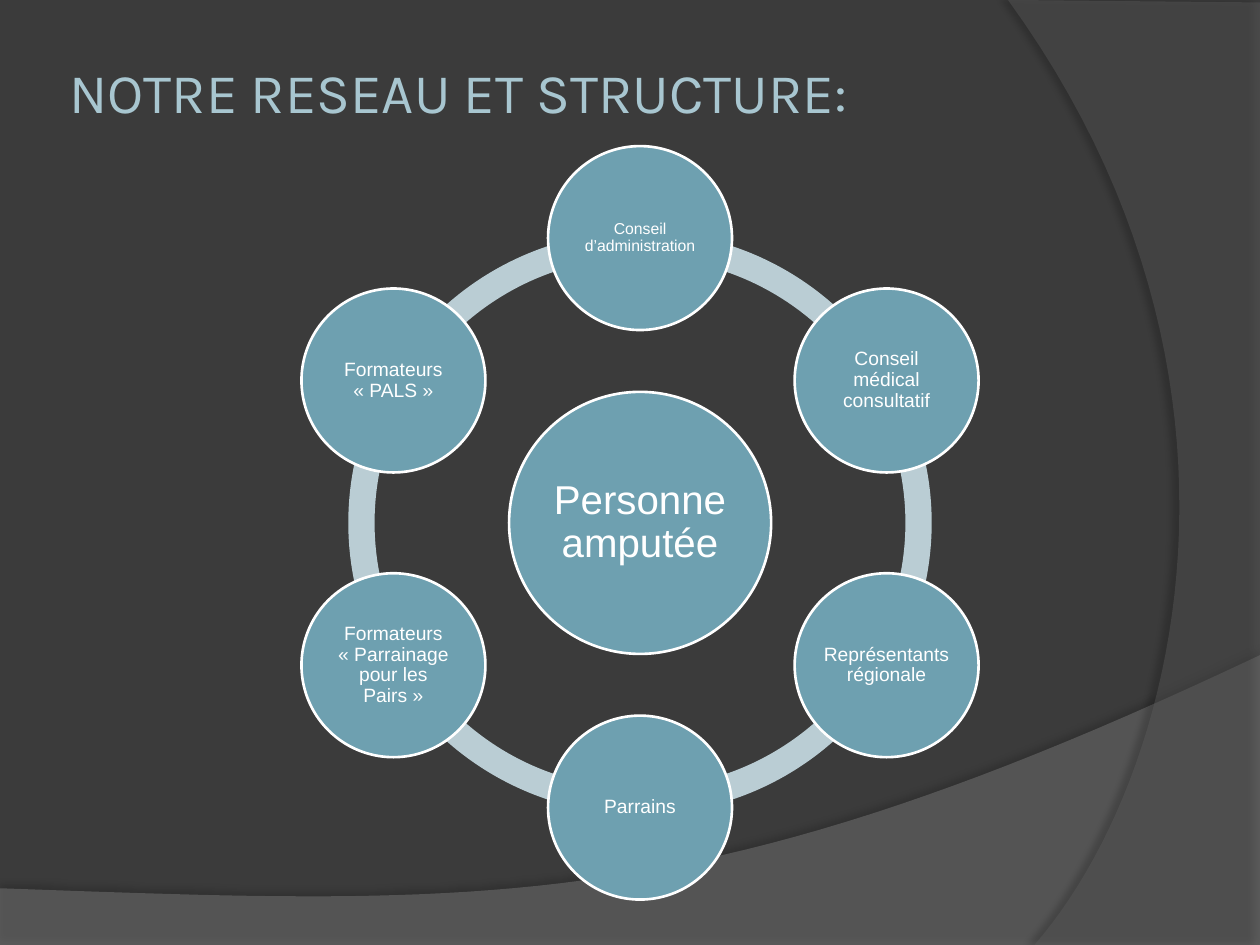
import math

from lxml import etree
from pptx import Presentation
from pptx import util as u
from pptx.dml.color import RGBColor
from pptx.enum import shapes, text
from pptx.oxml.ns import qn

TITLE = "NOTRE RESEAU ET STRUCTURE:"
HUB = ("Personne amputée", 23)
NODES = [  # clockwise from the top: label, text size
    ("Conseil d’administration", 9),
    ("Conseil médical consultatif", 11),
    ("Représentants régionale", 11),
    ("Parrains", 11),
    ("Formateurs « Parrainage pour les Pairs »", 11),
    ("Formateurs « PALS »", 11),
]
COLORS = {"bg": "3B3B3B", "bottom": "7F7F7F", "right": "5E5E5E", "title": "A8C6D0",
          "ring": "BACDD4", "node": "6EA0B0", "white": "FFFFFF", "shadow": "000000"}
# Background waves: Bézier control points, then the corners that close the outline
WAVES = [
    {"curve": [(10, 5.2), (5.59, 7.29), (3.91, 7.19), (0, 7.05)],
     "corners": [(0, 7.5), (10, 7.5)],
     "color": "bottom", "opacity": 45, "shadow": (35, 4, 3.5, 270)},
    {"curve": [(8.21, 7.5), (9.35, 6.19), (10.18, 3), (8, 0)],
     "corners": [(10, 0.02), (10, 7.5)],
     "color": "right", "opacity": 40, "shadow": (45, 4, 4, 180)},
]
CX, CY = 5.08, 4.15
ORBIT, RING_SIZE, RING_WIDTH = 2.26, 4.63, 0.045
HUB_SIZE, NODE_SIZE = 2.08, 1.46
STEP = 360 / len(NODES)
NBSP = chr(160)


def rgb(name):
    return RGBColor.from_string(COLORS[name])


def paint(sp, name):
    sp.shadow.inherit = False
    sp.fill.solid()
    sp.fill.fore_color.rgb = rgb(name)
    sp.line.fill.background()


def bezier(points, n=48):
    """Sample a cubic Bézier curve at n + 1 points."""
    for i in range(n + 1):
        t = i / n
        weights = [math.comb(3, k) * t**k * (1 - t) ** (3 - k) for k in range(4)]
        yield tuple(sum(w * p[axis] for w, p in zip(weights, points)) for axis in (0, 1))


def set_alpha(color, percent):
    etree.SubElement(color, qn("a:alpha"), val=str(percent * 1000))


def add_wave(s, wave):
    outline = [*bezier(wave["curve"]), *wave["corners"]]
    # Freeform points are rounded to whole units, so they are given in EMU
    start, *rest = [(u.Inches(x), u.Inches(y)) for x, y in outline]
    builder = s.shapes.build_freeform(*start)
    builder.add_line_segments(rest, close=True)
    sp = builder.convert_to_shape()
    paint(sp, wave["color"])
    props = sp._element.spPr
    set_alpha(props.find(qn("a:solidFill"))[0], wave["opacity"])
    opacity, blur, distance, angle = wave["shadow"]
    shadow = etree.SubElement(props.find(qn("a:effectLst")), qn("a:outerShdw"),
                              blurRad=str(u.Pt(blur)), dist=str(u.Pt(distance)),
                              dir=str(angle * 60000), rotWithShape="0")
    set_alpha(etree.SubElement(shadow, qn("a:srgbClr"), val=COLORS["shadow"]), opacity)


def add_centred(s, kind, x, y, size):
    return s.shapes.add_shape(kind, u.Inches(x - size / 2), u.Inches(y - size / 2),
                              u.Inches(size), u.Inches(size))


def set_insets(tf, inches):
    tf.margin_left = tf.margin_right = tf.margin_top = tf.margin_bottom = u.Inches(inches)


def style(p, size, font, color):
    p.font.size, p.font.name = u.Pt(size), font
    p.font.color.rgb = rgb(color)


def bind_quotes(label):
    """Keep French quotation marks on the line of the word they enclose."""
    return label.replace("« ", "«" + NBSP).replace(" »", NBSP + "»")


def add_circle(s, x, y, diameter, label, size):
    sp = add_centred(s, shapes.MSO_SHAPE.OVAL, x, y, diameter)
    paint(sp, "node")
    sp.line.color.rgb = rgb("white")
    sp.line.width = u.Pt(1.5)
    tf = sp.text_frame
    tf.word_wrap = True
    tf.vertical_anchor = text.MSO_ANCHOR.MIDDLE
    set_insets(tf, 0)
    tf.text = bind_quotes(label)
    p = tf.paragraphs[0]
    p.alignment = text.PP_ALIGN.CENTER
    p.line_spacing = 0.9
    style(p, size, "Arial", "white")


def add_title(s):
    title = s.shapes.title
    title.left, title.top, title.width, title.height = map(u.Inches, (0.5, 0.3, 6.7, 0.85))
    tf = title.text_frame
    tf.text = TITLE
    tf.word_wrap = True
    tf.vertical_anchor = text.MSO_ANCHOR.MIDDLE
    set_insets(tf, 0.05)
    p = tf.paragraphs[0]
    p.alignment = text.PP_ALIGN.LEFT
    style(p, 32, "Karla", "title")


def add_network(s):
    for i in range(len(NODES)):
        arc = add_centred(s, shapes.MSO_SHAPE.BLOCK_ARC, CX, CY, RING_SIZE)
        paint(arc, "ring")
        start = (i * STEP - 90) % 360
        # Angles are stored in 60000ths of a degree, adjustments in 100000ths
        arc.adjustments[0] = start * 0.6
        arc.adjustments[1] = (start + STEP) % 360 * 0.6
        arc.adjustments[2] = RING_WIDTH
    add_circle(s, CX, CY, HUB_SIZE, *HUB)
    for i, node in enumerate(NODES):
        angle = math.radians(i * STEP)
        add_circle(s, CX + ORBIT * math.sin(angle), CY - ORBIT * math.cos(angle),
                   NODE_SIZE, *node)


def main():
    prs = Presentation()
    prs.slide_width, prs.slide_height = u.Inches(10), u.Inches(7.5)
    s = prs.slides.add_slide(prs.slide_layouts[5])
    s.background.fill.solid()
    s.background.fill.fore_color.rgb = rgb("bg")
    for wave in WAVES:
        add_wave(s, wave)
    add_title(s)
    add_network(s)
    prs.save("out.pptx")


if __name__ == "__main__":
    main()
